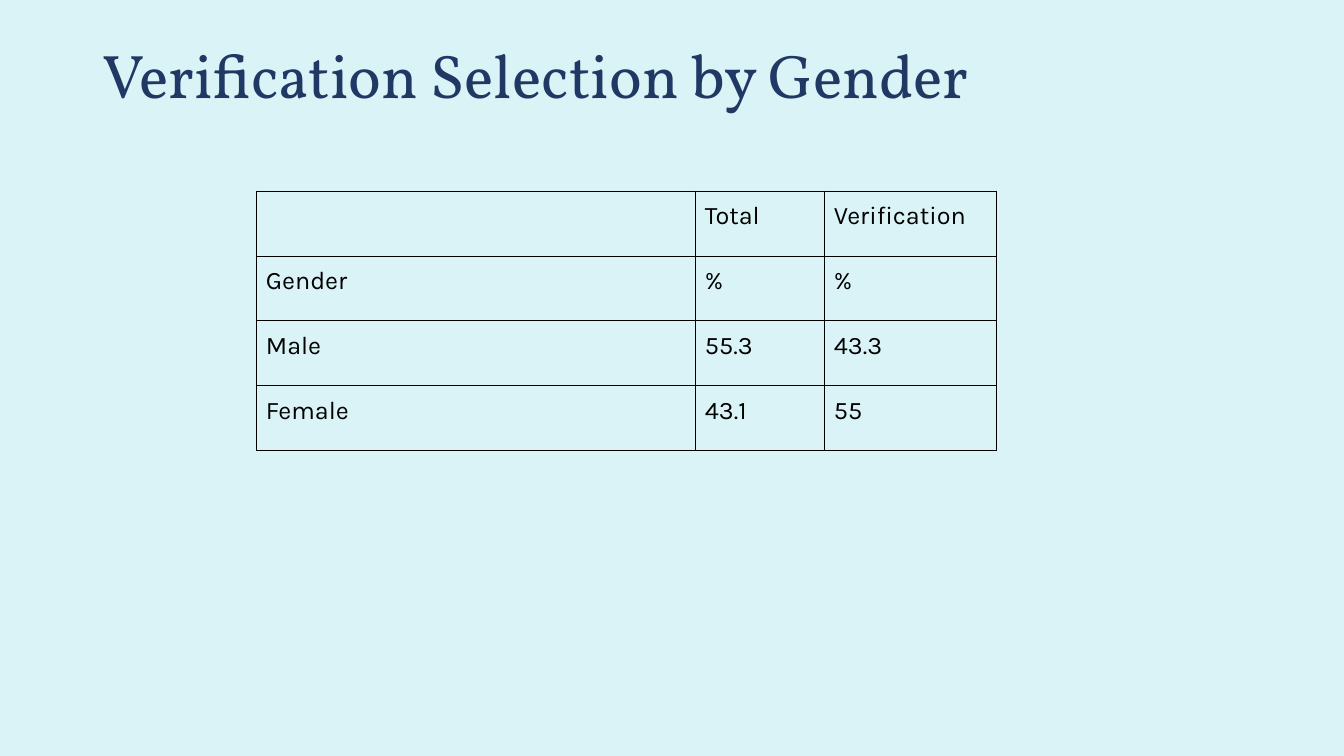
import pptx
import pptx.dml.color
import pptx.enum.text
import pptx.oxml
import pptx.oxml.ns
import pptx.util

# Content
TITLE = "Verification Selection by Gender"
ROWS = [
    ("", "Total", "Verification"),
    ("Gender", "%", "%"),
    ("Male", "55.3", "43.3"),
    ("Female", "43.1", "55"),
]

# Layout in px
SLIDE_SIZE = (1344, 756)
TITLE_BOX = (93, 40, 1159, 146)
TABLE_LEFT, TABLE_TOP = 256, 191
COLUMN_WIDTHS = (439, 129, 172)
ROW_HEIGHT = 65
CELL_MARGIN = 10
COLORS = {"background": "DAF3F6", "title": "203864", "table": "000000"}


def px(length):
    return pptx.util.Emu(round(length * 914400 / 100.8))


def rgb(name):
    return pptx.dml.color.RGBColor.from_string(COLORS[name])


def write_text(frame, text, *, font, size, color, line_spacing=1.0):
    frame.word_wrap = True
    frame.vertical_anchor = pptx.enum.text.MSO_ANCHOR.TOP
    paragraph = frame.paragraphs[0]
    paragraph.alignment = pptx.enum.text.PP_ALIGN.LEFT
    paragraph.line_spacing = line_spacing
    paragraph.font.size = pptx.util.Pt(size)
    if text:
        run = paragraph.add_run()
        run.text = text
        run.font.name = font
        run.font.size = pptx.util.Pt(size)
        run.font.color.rgb = rgb(color)


def add_borders(cell):
    properties = cell._tc.get_or_add_tcPr()
    namespace = pptx.oxml.ns.nsdecls("a")
    for position, side in enumerate(("lnL", "lnR", "lnT", "lnB")):
        border = pptx.oxml.parse_xml(
            f'<a:{side} {namespace} w="9525"><a:solidFill>'
            f'<a:srgbClr val="{COLORS["table"]}"/></a:solidFill></a:{side}>'
        )
        properties.insert(position, border)


presentation = pptx.Presentation()
presentation.slide_width, presentation.slide_height = map(px, SLIDE_SIZE)
slide = presentation.slides.add_slide(presentation.slide_layouts[6])
slide.background.fill.solid()
slide.background.fill.fore_color.rgb = rgb("background")

# Table
table = slide.shapes.add_table(
    len(ROWS), len(COLUMN_WIDTHS), px(TABLE_LEFT), px(TABLE_TOP),
    px(sum(COLUMN_WIDTHS)), px(ROW_HEIGHT * len(ROWS)),
).table
table.first_row = table.horz_banding = False
for column, width in zip(table.columns, COLUMN_WIDTHS):
    column.width = px(width)
for row, values in zip(table.rows, ROWS):
    row.height = px(ROW_HEIGHT)
    for cell, value in zip(row.cells, values):
        cell.margin_left = cell.margin_right = px(CELL_MARGIN)
        cell.margin_top = cell.margin_bottom = px(CELL_MARGIN)
        cell.fill.background()
        write_text(cell.text_frame, value, font="Karla", size=18, color="table")
        add_borders(cell)

# Title
title = slide.shapes.add_textbox(*map(px, TITLE_BOX))
write_text(title.text_frame, TITLE, font="Vollkorn", size=44, color="title",
           line_spacing=0.9)

presentation.save("out.pptx")
